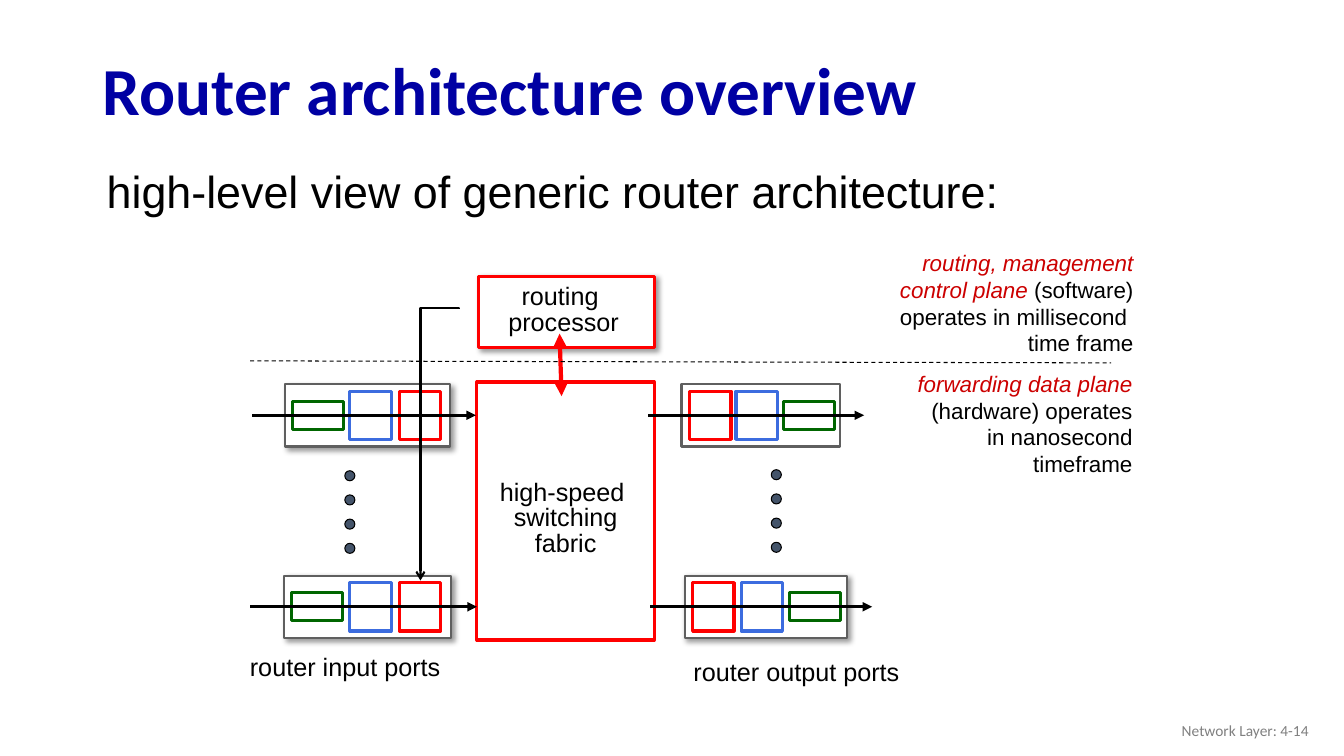
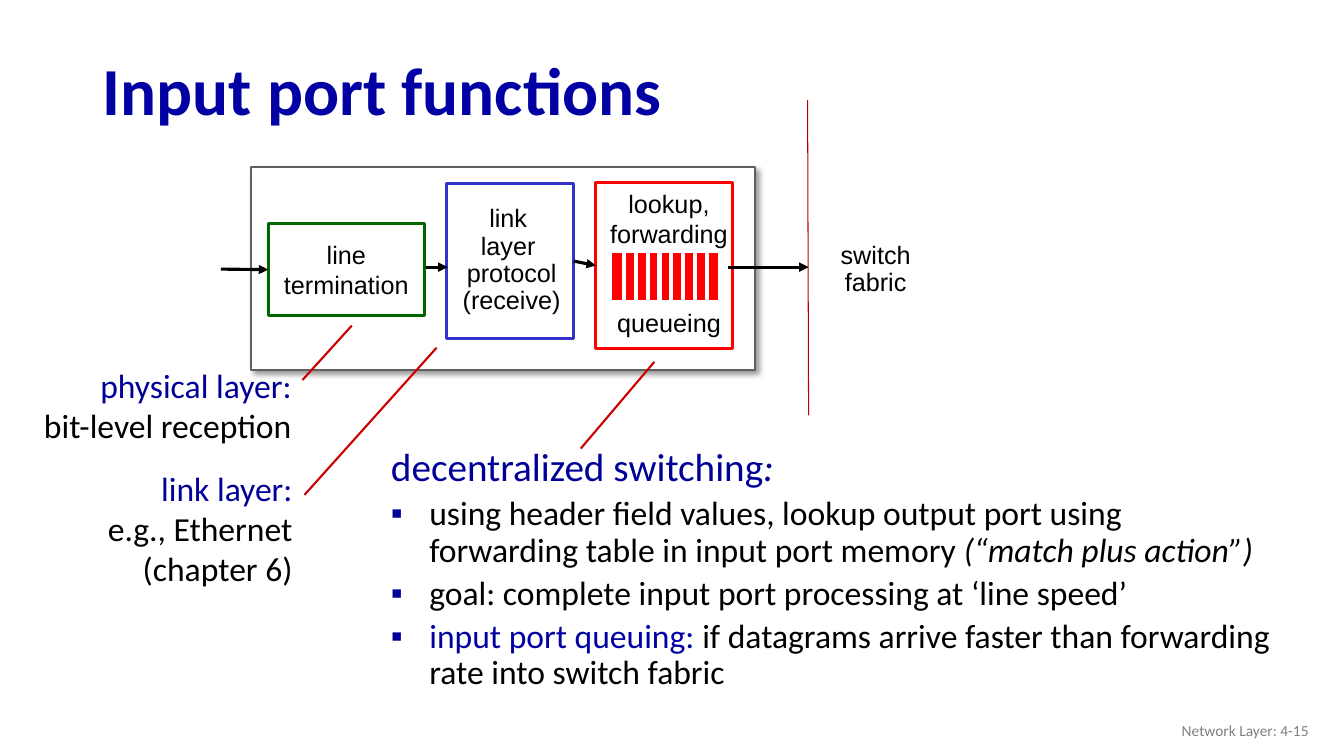
from dataclasses import dataclass
from typing import NamedTuple, Optional, Sequence

import lxml.etree
import pptx
import pptx.dml.color
import pptx.enum.dml
import pptx.enum.shapes
import pptx.enum.text
import pptx.oxml.ns
import pptx.presentation
import pptx.shapes.autoshape
import pptx.shapes.connector
import pptx.slide
import pptx.text.text
import pptx.util

Inches, Pt = pptx.util.Inches, pptx.util.Pt
ALIGN, ANCHOR = pptx.enum.text.PP_ALIGN, pptx.enum.text.MSO_ANCHOR
FIT = pptx.enum.text.MSO_AUTO_SIZE
SHAPE, CONNECTOR = pptx.enum.shapes.MSO_SHAPE, pptx.enum.shapes.MSO_CONNECTOR
qn = pptx.oxml.ns.qn

COLORS = {
    "title": "0000A3", "text": "000000", "white": "FFFFFF", "footer": "808080",
    "frame": "5F5F5F", "red": "FF0000", "green": "006600", "blue": "3C6CDF",
    "link": "3333CC", "dot": "44546A", "plane": "CC0000", "fabric": "C00000",
    "layer": "000099",
}


class Rect(NamedTuple):
    left: float
    top: float
    width: float
    height: float


class Run(NamedTuple):
    text: str
    color: str = "text"
    italic: bool = False


@dataclass
class Para:
    runs: Sequence[Run]
    size: float = 18
    before: float = 0
    bullet: bool = False


@dataclass
class TextStyle:
    font: str = "Arial"
    align: ALIGN = ALIGN.LEFT
    spacing: float = 1.0
    anchor: ANCHOR = ANCHOR.TOP
    wrap: bool = False
    grow: bool = True
    bold: bool = False


@dataclass
class Port:
    """A port with the left offsets of its termination, link and lookup cells."""
    left: float
    top: float
    width: float
    cell_lefts: tuple[float, float, float]
    arrow_start: float
    arrow_end: float
    shadow: bool = True


@dataclass
class Callout:
    start: tuple[float, float]
    end: tuple[float, float]


PORT_HEIGHT = 0.62
PORT_CELLS = (("green", 0.51, 0.28), ("blue", 0.41, 0.48), ("red", 0.41, 0.48))
PORTS = (
    Port(2.83, 3.81, 1.63, (0.07, 0.64, 1.13), 2.50, 4.72),
    Port(2.82, 5.71, 1.65, (0.07, 0.65, 1.14), 2.48, 4.73),
    Port(6.76, 3.81, 1.57, (1.01, 0.54, 0.08), 6.43, 8.57, shadow=False),
    Port(6.79, 5.71, 1.61, (1.04, 0.56, 0.08), 6.45, 8.65),
)
CALLOUTS = (
    Callout((3.00, 3.77), (3.49, 3.23)),
    Callout((3.02, 4.91), (4.33, 3.45)),
    Callout((5.76, 4.45), (6.49, 3.59)),
)


def rgb(name: str) -> pptx.dml.color.RGBColor:
    return pptx.dml.color.RGBColor.from_string(COLORS[name])


def add_xml(parent, tag: str, **attributes: str):
    child = lxml.etree.SubElement(parent, qn(tag))
    for key, value in attributes.items():
        child.set(key, value)
    return child


def plain(*lines: str, size: float = 18) -> list[Para]:
    return [Para([Run(line)], size) for line in lines]


def add_bullet(paragraph) -> None:
    properties = paragraph._p.get_or_add_pPr()
    indent = Inches(0.38)
    properties.set("marL", str(indent))
    properties.set("indent", str(-indent))
    add_xml(add_xml(properties, "a:buClr"), "a:srgbClr", val=COLORS["layer"])
    add_xml(properties, "a:buFont", typeface="Arial")
    add_xml(properties, "a:buChar", char="▪")


def write(frame: pptx.text.text.TextFrame, paras: Sequence[Para], style: TextStyle) -> None:
    frame.word_wrap = style.wrap
    frame.auto_size = FIT.SHAPE_TO_FIT_TEXT if style.grow else FIT.NONE
    frame.vertical_anchor = style.anchor
    for index, para in enumerate(paras):
        paragraph = frame.add_paragraph() if index else frame.paragraphs[0]
        if para.bullet:
            add_bullet(paragraph)
        paragraph.alignment = style.align
        paragraph.line_spacing = style.spacing
        paragraph.space_before = Pt(para.before)
        first = para.runs[0]
        font = paragraph.font
        font.name, font.size = style.font, Pt(para.size)
        font.bold, font.italic = style.bold, first.italic
        font.color.rgb = rgb(first.color)
        for part in para.runs:
            run = paragraph.add_run()
            run.text = part.text
            if part.color != first.color:
                run.font.color.rgb = rgb(part.color)
            if part.italic != first.italic:
                run.font.italic = part.italic


def add_text(slide: pptx.slide.Slide, at: Rect, paras: Sequence[Para], style: TextStyle) -> None:
    write(slide.shapes.add_textbox(*map(Inches, at)).text_frame, paras, style)


def add_box(slide: pptx.slide.Slide, at: Rect, line: Optional[str] = None,
            width: float = 2.25, fill: Optional[str] = "white", shadow: bool = False,
            kind: SHAPE = SHAPE.RECTANGLE) -> pptx.shapes.autoshape.Shape:
    box = slide.shapes.add_shape(kind, *map(Inches, at))
    box.shadow.inherit = False
    if fill:
        box.fill.solid()
        box.fill.fore_color.rgb = rgb(fill)
    else:
        box.fill.background()
    if line:
        box.line.color.rgb = rgb(line)
        box.line.width = Pt(width)
    else:
        box.line.fill.background()
    if shadow:
        effects = box._element.spPr.find(qn("a:effectLst"))
        outer = add_xml(effects, "a:outerShdw", blurRad=str(Pt(4)), dist=str(Pt(3)),
                        dir="2700000", algn="tl", rotWithShape="0")
        add_xml(add_xml(outer, "a:srgbClr", val=COLORS["text"]), "a:alpha", val="40000")
    return box


def add_line(slide: pptx.slide.Slide, start: tuple[float, float], end: tuple[float, float],
             color: str = "text", width: float = 2.25, head: str = "", tail: str = "",
             kind: CONNECTOR = CONNECTOR.STRAIGHT) -> pptx.shapes.connector.Connector:
    line = slide.shapes.add_connector(kind, *map(Inches, (*start, *end)))
    line.line.color.rgb = rgb(color)
    line.line.width = Pt(width)
    outline = line.line._get_or_add_ln()
    for tag, arrow in (("a:headEnd", head), ("a:tailEnd", tail)):
        if arrow:
            add_xml(outline, tag, type=arrow)
    add_xml(line._element.spPr, "a:effectLst")
    return line


def add_slide(deck: pptx.presentation.Presentation, title: str, number: int) -> pptx.slide.Slide:
    slide = deck.slides.add_slide(deck.slide_layouts[5])
    heading = slide.shapes.title
    heading.left, heading.top, heading.width, heading.height = map(
        Inches, (0.92, 0.44, 11.5, 0.98))
    write(heading.text_frame, [Para([Run(title, "title")], 48)],
          TextStyle("Calibri", spacing=0.9, anchor=ANCHOR.MIDDLE, wrap=True,
                    grow=False, bold=True))
    add_text(slide, Rect(10.08, 7.05, 3, 0.4),
             [Para([Run(f"Network Layer: 4-{number}", "footer")], 11)],
             TextStyle("Calibri", ALIGN.RIGHT, anchor=ANCHOR.MIDDLE, wrap=True, grow=False))
    return slide


def add_port(slide: pptx.slide.Slide, port: Port) -> None:
    add_box(slide, Rect(port.left, port.top, port.width, PORT_HEIGHT), "frame", 1.5,
            shadow=port.shadow)
    for offset, (color, width, height) in zip(port.cell_lefts, PORT_CELLS):
        top = port.top + (PORT_HEIGHT - height) / 2
        add_box(slide, Rect(port.left + offset, top, width, height), color)
    middle = port.top + PORT_HEIGHT / 2
    add_line(slide, (port.arrow_start, middle), (port.arrow_end, middle), tail="triangle")


def add_control_arrow(slide: pptx.slide.Slide) -> None:
    """Elbow that leaves the processor leftwards and drops to the lower input port."""
    elbow = add_line(slide, (3.01, 4.22), (5.71, 4.60), width=1.5, tail="arrow",
                     kind=CONNECTOR.ELBOW)
    properties = elbow._element.spPr
    properties.find(qn("a:xfrm")).set("rot", "5400000")
    adjustments = properties.find(qn("a:prstGeom")).find(qn("a:avLst"))
    add_xml(adjustments, "a:gd", name="adj1", fmla="val -100")


def build_overview(deck: pptx.presentation.Presentation) -> None:
    slide = add_slide(deck, "Router architecture overview", 14)
    label = TextStyle()
    tight = TextStyle(align=ALIGN.CENTER, spacing=0.85)
    plane = TextStyle(align=ALIGN.RIGHT, wrap=True)

    add_text(slide, Rect(0.96, 1.58, 11.8, 0.64),
             plain("high-level view of generic router architecture:", size=32),
             TextStyle(wrap=True))
    add_box(slide, Rect(4.73, 3.79, 1.76, 2.56), "red")
    add_text(slide, Rect(4.85, 4.72, 1.52, 0.87),
             plain("high-speed ", "switching", "fabric"), tight)
    add_box(slide, Rect(4.75, 2.74, 1.74, 0.71), "red", shadow=True)
    add_text(slide, Rect(4.94, 2.78, 1.3, 0.61), plain("routing ", "processor"), tight)
    add_line(slide, (5.55, 3.31), (5.57, 3.93), "red", 3, "triangle", "triangle")

    for port in PORTS:
        add_port(slide, port)
    for left, top in ((3.42, 4.67), (7.65, 4.66)):
        for row in range(4):
            add_box(slide, Rect(left, top + row * 0.24, 0.1, 0.1), "text", 0.75, "dot",
                    kind=SHAPE.OVAL)
    add_text(slide, Rect(2.38, 6.41, 2.09, 0.4), plain("router input ports"), label)
    add_text(slide, Rect(6.78, 6.46, 2.24, 0.4), plain("router output ports"), label)

    divider = add_line(slide, (2.48, 3.58), (11.02, 3.6), width=0.75)
    divider.line.dash_style = pptx.enum.dml.MSO_LINE.DASH
    add_text(slide, Rect(8.94, 3.62, 2.39, 1.18),
             [Para([Run("forwarding data plane ", "plane", True),
                    Run("(hardware) operates in nanosecond timeframe")], 16)], plane)
    add_text(slide, Rect(8.19, 2.42, 3.15, 1.18),
             [Para([Run("routing, management", "plane", True)], 16),
              Para([Run("control plane ", "plane", True), Run("(software)")], 16),
              *plain("operates in millisecond ", "time frame", size=16)], plane)
    add_control_arrow(slide)


def build_input_port(deck: pptx.presentation.Presentation) -> None:
    slide = add_slide(deck, "Input port functions", 15)
    centered = TextStyle(align=ALIGN.CENTER, anchor=ANCHOR.MIDDLE, grow=False)
    compact = TextStyle(align=ALIGN.CENTER, spacing=0.9, anchor=ANCHOR.MIDDLE, grow=False)
    layer_note = TextStyle("Calibri", ALIGN.RIGHT)

    add_box(slide, Rect(2.49, 1.66, 5, 2.01), "frame", 1.5, shadow=True)
    add_line(slide, (8.01, 0.99), (8.02, 4.12), "fabric", 0.75)
    fabric = add_box(slide, Rect(8.11, 2.22, 1.15, 0.91))
    write(fabric.text_frame, plain("switch", "fabric"), compact)

    termination = add_box(slide, Rect(2.66, 2.22, 1.55, 0.91), "green")
    write(termination.text_frame, plain("line", "termination"), centered)
    add_text(slide, Rect(4.5, 2.13, 1.15, 0.91),
             plain("link ", "layer ", "protocol", "(receive)"), compact)
    link_layer = add_box(slide, Rect(4.43, 1.82, 1.26, 1.54), "link", fill=None)
    add_text(slide, Rect(5.95, 1.82, 1.37, 1.6),
             [*plain("lookup,", "forwarding"), Para([Run("queueing")], before=41.4)],
             TextStyle(align=ALIGN.CENTER))
    add_box(slide, Rect(6.05, 2.49, 1.09, 0.51), "white", 3, "red")
    for gap in range(8):
        x = 6.19 + gap * 0.82 / 7
        add_line(slide, (x, 2.5), (x, 2.99), "white", 3)
    lookup = add_box(slide, Rect(5.91, 1.81, 1.36, 1.65), "red", fill=None)

    arrival = add_line(slide, (2.19, 2.67), (2.66, 2.67), tail="triangle")
    arrival.end_connect(termination, 1)
    add_line(slide, (4.23, 2.65), (4.44, 2.65), tail="triangle")
    to_lookup = add_line(slide, (5.69, 2.6), (5.91, 2.6), tail="triangle")
    to_lookup.begin_connect(link_layer, 3)
    to_lookup.end_connect(lookup, 1)
    add_line(slide, (7.22, 2.65), (8.02, 2.65), tail="triangle")

    add_text(slide, Rect(0.28, 3.57, 2.71, 0.91),
             [Para([Run("physical layer:", "layer")], 24),
              *plain("bit-level reception", size=24)], layer_note)
    add_text(slide, Rect(0.95, 4.59, 2.05, 1.31),
             [Para([Run("link layer:", "layer")], 24),
              *plain("e.g., Ethernet", "(chapter 6)", size=24)], layer_note)
    bullets = (
        [Run("using header field values, lookup output port using forwarding table "
             "in input port memory "), Run("(“match plus action”)", italic=True)],
        [Run("goal: complete input port processing at ‘line speed’")],
        [Run("input port queuing: ", "title"),
         Run("if datagrams arrive faster than forwarding rate into switch fabric")],
    )
    switching = Para([Run("decentralized switching", "layer"), Run(":", "layer", True)], 28, 5)
    add_text(slide, Rect(3.78, 4.39, 8.96, 2.92),
             [switching, *(Para(runs, 24, 5, bullet=True) for runs in bullets)],
             TextStyle("Calibri", spacing=0.9, wrap=True, grow=False))
    for callout in CALLOUTS:
        add_line(slide, callout.start, callout.end, "plane", 1.5)


def main() -> None:
    deck = pptx.Presentation()
    deck.slide_width, deck.slide_height = Inches(13.33), Inches(7.5)
    build_overview(deck)
    build_input_port(deck)
    deck.save("out.pptx")


if __name__ == "__main__":
    main()
